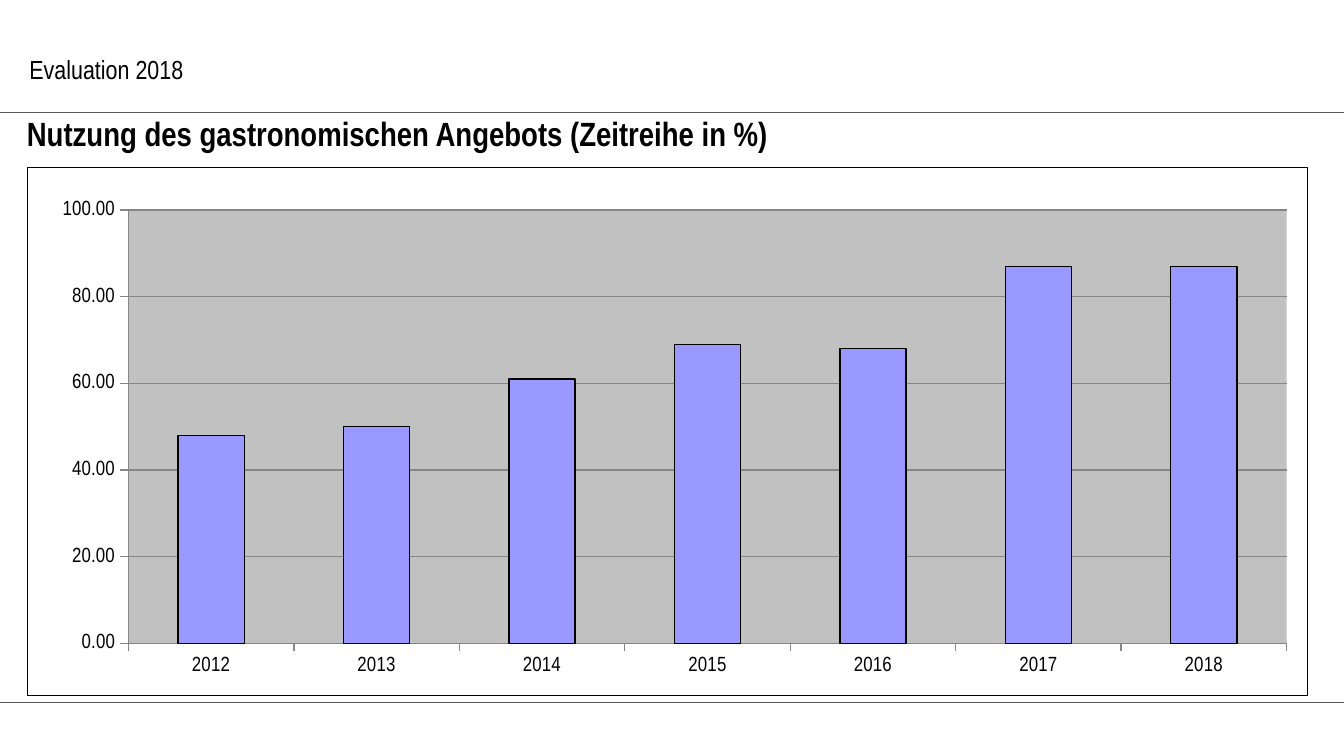
from lxml.etree import SubElement
from pptx import Presentation
from pptx.chart.data import CategoryChartData
from pptx.dml.color import RGBColor
from pptx.enum.chart import XL_CHART_TYPE, XL_TICK_MARK
from pptx.enum.shapes import MSO_CONNECTOR
from pptx.oxml import parse_xml
from pptx.oxml.ns import qn
from pptx.util import Inches, Pt

FONT = "Arial Narrow"
COLORS = {"text": "000000", "rule": "595959", "axis": "868686",
          "plot": "C1C1C1", "bar": "9999FF"}
NS = ('xmlns:c="http://schemas.openxmlformats.org/drawingml/2006/chart" '
      'xmlns:a="http://schemas.openxmlformats.org/drawingml/2006/main"')


def add_text(text, left, top, width, height, size, bold=False):
    box = slide.shapes.add_textbox(Inches(left), Inches(top), Inches(width), Inches(height))
    frame = box.text_frame
    frame.word_wrap = True
    frame.text = text
    font = frame.paragraphs[0].runs[0].font
    font.name, font.size, font.bold = FONT, Pt(size), bold
    font.color.rgb = RGBColor.from_string(COLORS["text"])
    return frame


def set_line(line, color, width):
    line.color.rgb = RGBColor.from_string(COLORS[color])
    line.width = Pt(width)


prs = Presentation()
prs.slide_width = Inches(10)
prs.slide_height = Inches(10 * 9 / 16)  # 16:9
slide = prs.slides.add_slide(prs.slide_layouts[6])

# Header and footer rules
for left, y in ((-0.04, 5.23), (0, 0.84)):
    rule = slide.shapes.add_connector(
        MSO_CONNECTOR.STRAIGHT, Inches(left), Inches(y), Inches(10), Inches(y))
    set_line(rule.line, "rule", 0.5)
    SubElement(rule._element.spPr, qn("a:effectLst"))

# Usage chart
usage = CategoryChartData(number_format="0.00")
usage.categories = [str(year) for year in range(2012, 2019)]
usage.add_series("Series 1", (48, 50, 61, 69, 68, 87, 87))
chart = slide.shapes.add_chart(
    XL_CHART_TYPE.COLUMN_CLUSTERED, Inches(0.2), Inches(1.24),
    Inches(9.53), Inches(3.94), usage).chart
chart.has_legend = False
chart.has_title = False
chart.font.name, chart.font.size = FONT, Pt(11)
chart.font.color.rgb = RGBColor.from_string(COLORS["text"])

columns = chart.plots[0]
columns.gap_width = 150
columns.vary_by_categories = False
bars = columns.series[0]
bars.format.fill.solid()
bars.format.fill.fore_color.rgb = RGBColor.from_string(COLORS["bar"])
set_line(bars.format.line, "text", 0.75)

percent_axis = chart.value_axis
percent_axis.minimum_scale, percent_axis.maximum_scale = 0, 100
percent_axis.major_unit = 20
percent_axis.has_major_gridlines = True
set_line(percent_axis.major_gridlines.format.line, "axis", 0.75)
percent_axis.tick_labels.number_format = "0.00"
percent_axis.tick_labels.number_format_is_linked = False
for axis in (chart.category_axis, percent_axis):
    axis.major_tick_mark = XL_TICK_MARK.OUTSIDE
    axis.minor_tick_mark = XL_TICK_MARK.NONE
    set_line(axis.format.line, "axis", 0.75)

# Plot position, plot fill and chart border
chart_space = chart._chartSpace
plot_area = chart_space.chart.plotArea
for layout in plot_area.findall(qn("c:layout")):
    plot_area.remove(layout)
plot_area.insert(0, parse_xml(
    f'<c:layout {NS}><c:manualLayout><c:layoutTarget val="inner"/>'
    '<c:xMode val="edge"/><c:yMode val="edge"/><c:x val="0.079"/><c:y val="0.081"/>'
    '<c:w val="0.905"/><c:h val="0.82"/></c:manualLayout></c:layout>'))
plot_area.append(parse_xml(
    f'<c:spPr {NS}><a:solidFill><a:srgbClr val="{COLORS["plot"]}"/></a:solidFill>'
    '<a:ln><a:noFill/></a:ln></c:spPr>'))
chart_space.chart.addnext(parse_xml(
    f'<c:spPr {NS}><a:noFill/><a:ln w="{Pt(0.5)}"><a:solidFill>'
    f'<a:srgbClr val="{COLORS["text"]}"/></a:solidFill></a:ln></c:spPr>'))

# Header and title
add_text("Evaluation 2018", 0.12, 0.35, 9.69, 0.64, 14)
title = add_text("Nutzung des gastronomischen Angebots (Zeitreihe in %)",
                 0.2, 0.84, 9.45, 0.31, 18, bold=True)
title.margin_left = title.margin_right = title.margin_top = title.margin_bottom = 0

prs.save("out.pptx")
